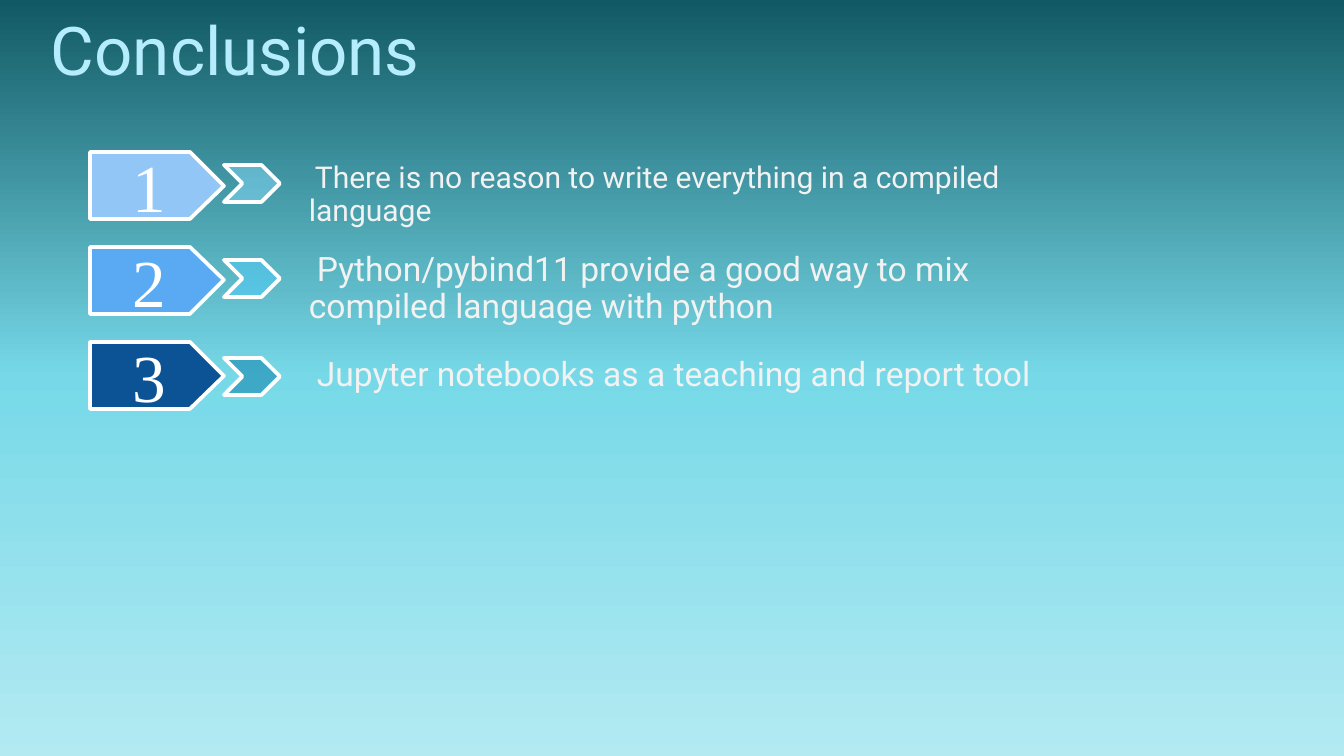
from lxml import etree
from pptx import Presentation
from pptx.dml.color import RGBColor
from pptx.enum.shapes import MSO_SHAPE
from pptx.enum.text import MSO_ANCHOR, PP_ALIGN
from pptx.oxml.ns import qn
from pptx.util import Emu, Pt

CHEVRON = MSO_SHAPE.CHEVRON
TOP, MIDDLE = MSO_ANCHOR.TOP, MSO_ANCHOR.MIDDLE
LEFT, CENTER = PP_ALIGN.LEFT, PP_ALIGN.CENTER

EMU_PER_PX = 914400 / 134.4

WHITE = RGBColor(0xFF, 0xFF, 0xFF)
TITLE_BLUE = RGBColor(0xB5, 0xED, 0xFD)
BODY_GREY = RGBColor(0xF2, 0xF2, 0xF2)
TAG_LIGHT = RGBColor(0x91, 0xC6, 0xF7)
TAG_MID = RGBColor(0x59, 0xAA, 0xF2)
TAG_DARK = RGBColor(0x0B, 0x53, 0x95)
CHEVRON_LIGHT = RGBColor(0x8A, 0xDF, 0xFF)
CHEVRON_MID = RGBColor(0x4F, 0xCE, 0xFF)
CHEVRON_DARK = RGBColor(0x00, 0x76, 0xA3)
BACKDROP = [
    (0, RGBColor(0x11, 0x59, 0x64)),
    (50, RGBColor(0x77, 0xD9, 0xE8)),
    (100, RGBColor(0xB3, 0xEA, 0xF2)),
]

# tag colour, chevron colour, chevron top, text top, text size, indent, text
CONCLUSIONS = [
    (TAG_LIGHT, CHEVRON_LIGHT, 165, 156, 16.1, 6,
     "There is no reason to write everything in a compiled language"),
    (TAG_MID, CHEVRON_MID, 260, 246, 18, 8,
     "Python/pybind11 provide a good way to mix compiled language with python"),
    (TAG_DARK, CHEVRON_DARK, 358, 351, 18, 8,
     "Jupyter notebooks as a teaching and report tool"),
]
FIRST_TAG_TOP, TAG_PITCH = 152, 95
TAG_LEFT, TAG_WIDTH, TAG_HEIGHT, TAG_POINT = 90, 134, 67, 34


def px(length):
    return Emu(round(length * EMU_PER_PX))


class Deck:
    sans, serif = "Roboto", "Times New Roman"
    inset, outline = 7, 2

    def __init__(self, width, height):
        self.prs = Presentation()
        self.prs.slide_width, self.prs.slide_height = px(width), px(height)
        self.slide = self.prs.slides.add_slide(self.prs.slide_layouts[6])

    def background(self, stops):
        fill = self.slide.background.fill
        fill.gradient()
        fill.gradient_angle = 270
        stop_list = next(self.slide.element.iter(qn("a:gsLst")))
        for old in list(stop_list):
            stop_list.remove(old)
        for percent, color in stops:
            stop = etree.SubElement(stop_list, qn("a:gs"), pos=str(percent * 1000))
            etree.SubElement(stop, qn("a:srgbClr"), val=str(color))

    def group(self):
        return self.slide.shapes.add_group_shape().shapes

    def paint(self, shape, color, opacity=100):
        shape.shadow.inherit = False
        shape.fill.solid()
        shape.fill.fore_color.rgb = color
        shape.line.color.rgb = WHITE
        shape.line.width = Pt(self.outline)
        if opacity < 100:
            swatch = shape.element.spPr.find(qn("a:solidFill"))[0]
            etree.SubElement(swatch, qn("a:alpha"), val=str(opacity * 1000))

    def tag(self, shapes, x, y, w, h, point, color):
        shoulder = x + w - point
        outline = shapes.build_freeform(x, y, scale=EMU_PER_PX)
        outline.add_line_segments([(shoulder, y), (x + w, y + h / 2),
                                   (shoulder, y + h), (x, y + h)], close=True)
        self.paint(outline.convert_to_shape(), color)

    def chevron(self, shapes, x, y, w, h, color):
        arrow = shapes.add_shape(CHEVRON, px(x), px(y), px(w), px(h))
        self.paint(arrow, color, opacity=48)

    def text(self, shapes, x, y, w, h, words, size, color, font=sans,
             align=LEFT, anchor=TOP, indent=0, spacing=None):
        frame = shapes.add_textbox(px(x), px(y), px(w), px(h)).text_frame
        frame.word_wrap = True
        frame.vertical_anchor = anchor
        frame.margin_left = frame.margin_right = px(self.inset)
        frame.margin_top = frame.margin_bottom = px(self.inset)
        paragraph = frame.paragraphs[0]
        paragraph.alignment = align
        paragraph.line_spacing = spacing
        if indent:
            properties = paragraph._p.get_or_add_pPr()
            properties.set("marL", "0")
            properties.set("indent", str(px(indent)))
        run = paragraph.add_run()
        run.text = words
        run.font.size = Pt(size)
        run.font.name = font
        run.font.color.rgb = color


def main():
    deck = Deck(1344, 756)
    deck.background(BACKDROP)
    page = deck.slide.shapes

    # Title
    deck.text(page, 44, -3, 952, 103, "Conclusions", 36, TITLE_BLUE, anchor=MIDDLE)

    # Numbered conclusions
    for index, conclusion in enumerate(CONCLUSIONS):
        tag_color, chevron_color, chevron_top, text_top, size, indent, words = conclusion
        tag_top = FIRST_TAG_TOP + index * TAG_PITCH
        marker = deck.group()
        deck.tag(marker, TAG_LEFT, tag_top, TAG_WIDTH, TAG_HEIGHT, TAG_POINT, tag_color)
        deck.text(marker, TAG_LEFT, tag_top - 12, 118, 91, str(index + 1), 36, WHITE,
                  font=deck.serif, align=CENTER, anchor=MIDDLE)
        deck.chevron(marker, TAG_LEFT + TAG_WIDTH, chevron_top, 56, 37, chevron_color)
        deck.text(page, 302, text_top, 806, 93, words, size, BODY_GREY,
                  indent=indent, spacing=0.9)

    deck.prs.save("out.pptx")


if __name__ == "__main__":
    main()
